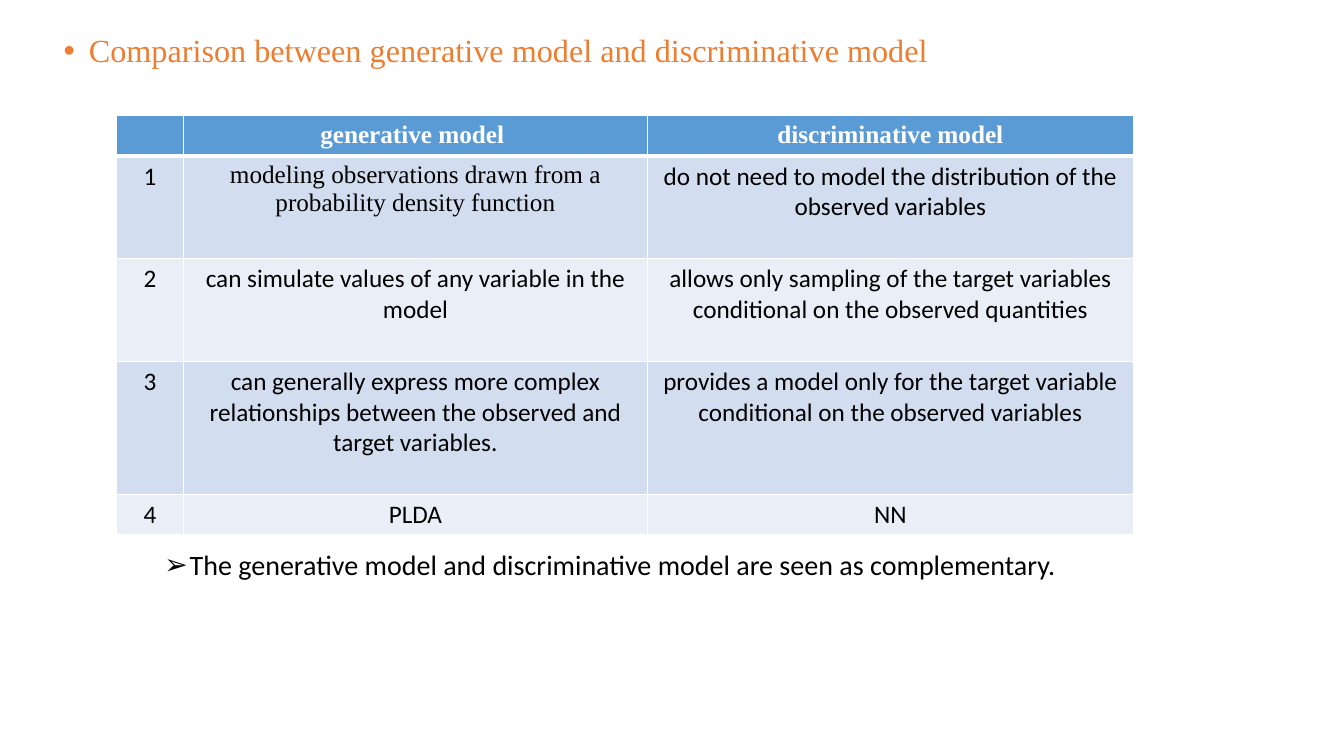
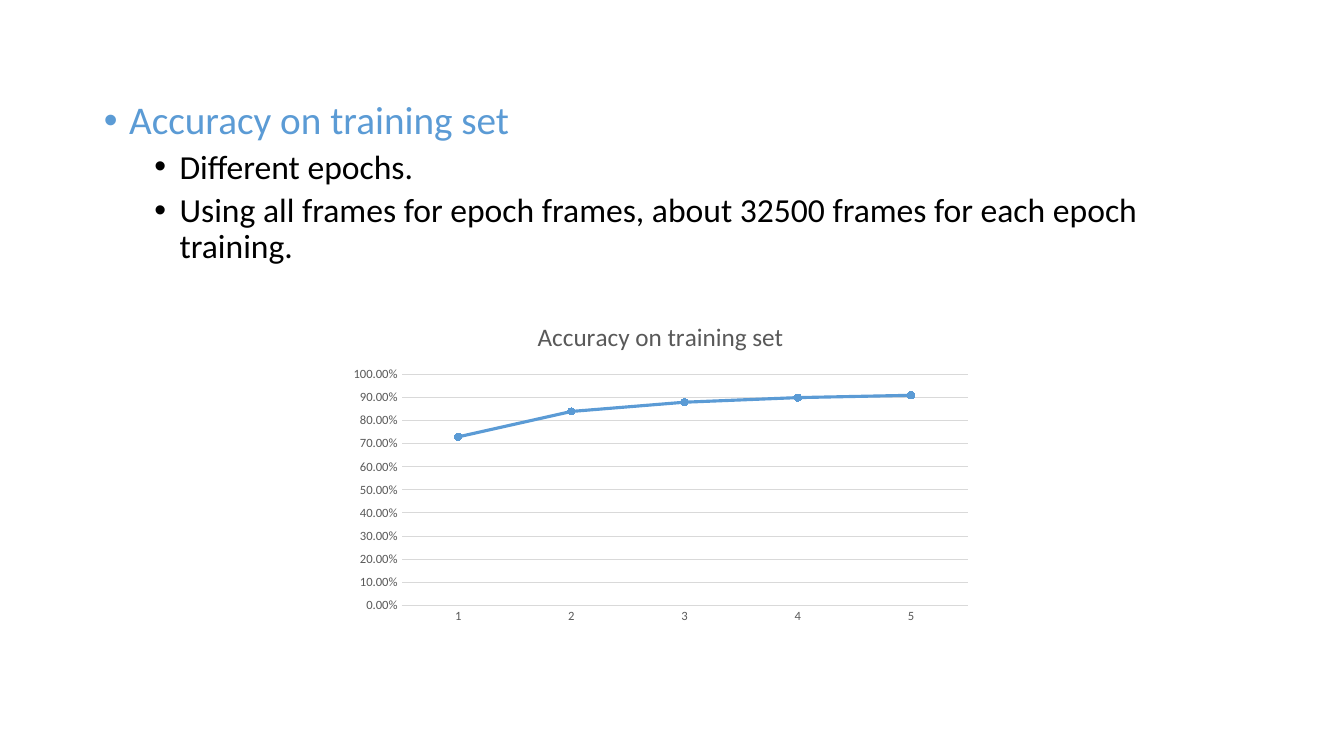
from dataclasses import dataclass

from lxml.etree import SubElement
from pptx import Presentation
from pptx.chart.data import CategoryChartData
from pptx.dml.color import RGBColor
from pptx.enum.chart import XL_CHART_TYPE as ChartType, XL_MARKER_STYLE as Marker
from pptx.enum.chart import XL_TICK_MARK as Tick
from pptx.enum.text import PP_ALIGN as Align
from pptx.oxml.ns import qn
from pptx.util import Emu, Inches, Pt


@dataclass(frozen=True)
class Theme:
    sans: str = "Calibri"
    serif: str = "Times New Roman"
    blue: str = "5B9BD5"
    orange: str = "ED7D31"
    black: str = "000000"
    white: str = "FFFFFF"
    grey: str = "595959"
    rule: str = "D9D9D9"
    bands: tuple = ("D2DEEF", "EAEFF7")
    heading: float = 28
    serif_heading: float = 23
    body: float = 24
    remark: float = 20
    cell: float = 18
    axis: float = 9


T = Theme()
WIDTH, HEIGHT = Inches(13.33), Inches(7.5)


@dataclass(frozen=True)
class Bullet:
    text: str
    size: float
    color: str = T.black
    font: str = T.sans
    level: int = 0
    mark: str = "•"


def box(left, top, width, height):
    """Turn percentages of the slide into a position and a size."""
    return (Emu(int(WIDTH * left / 100)), Emu(int(HEIGHT * top / 100)),
            Emu(int(WIDTH * width / 100)), Emu(int(HEIGHT * height / 100)))


def style(font, size, color, name=T.sans, bold=False):
    font.size, font.name, font.bold = Pt(size), name, bold
    font.color.rgb = RGBColor.from_string(color)


def add_bullets(s, area, bullets):
    tf = s.shapes.add_textbox(*area).text_frame
    tf.word_wrap = True
    for i, item in enumerate(bullets):
        p = tf.add_paragraph() if i else tf.paragraphs[0]
        p.text = item.text
        p.level = item.level
        p.line_spacing = 0.9
        if i:
            p.space_before = Pt(5)
        style(p.runs[0].font, item.size, item.color, item.font)
        pPr = p._p.get_or_add_pPr()
        pPr.set("marL", str(Inches(0.25 + 0.5 * item.level)))
        pPr.set("indent", str(-Inches(0.25)))
        SubElement(pPr, qn("a:buFont"), typeface="Arial")
        SubElement(pPr, qn("a:buChar"), char=item.mark)


def set_borders(cell, bottom):
    tcPr = cell._tc.get_or_add_tcPr()
    for i, (side, width) in enumerate((("L", 1), ("R", 1), ("T", 1), ("B", bottom))):
        ln = tcPr.makeelement(qn(f"a:ln{side}"), {"w": str(Pt(width))})
        SubElement(SubElement(ln, qn("a:solidFill")), qn("a:srgbClr"), val=T.white)
        tcPr.insert(i, ln)


def add_comparison(s, area, rows, col_shares, row_shares, serif_cells):
    """Place a banded table whose columns and rows divide the area by shares."""
    table = s.shapes.add_table(len(rows), len(rows[0]), *area).table
    for col, share in zip(table.columns, col_shares):
        col.width = Emu(int(area[2] * share / sum(col_shares)))
    for row, share in zip(table.rows, row_shares):
        row.height = Emu(int(area[3] * share / sum(row_shares)))
    for r, texts in enumerate(rows):
        header = r == 0
        for c, text in enumerate(texts):
            cell = table.cell(r, c)
            cell.fill.solid()
            fill = T.blue if header else T.bands[(r - 1) % 2]
            cell.fill.fore_color.rgb = RGBColor.from_string(fill)
            set_borders(cell, 3 if header else 1)
            p = cell.text_frame.paragraphs[0]
            p.text = text
            p.alignment = Align.CENTER
            name = T.serif if header or (r, c) in serif_cells else T.sans
            for run in p.runs:
                style(run.font, T.cell, T.white if header else T.black, name, header)


def set_line(line, color, width):
    line.color.rgb = RGBColor.from_string(color)
    line.width = Pt(width)


def add_accuracy_chart(s, area, title, values):
    data = CategoryChartData(number_format="0.00%")
    data.categories = [str(i + 1) for i in range(len(values))]
    data.add_series("Series 1", values)
    chart = s.shapes.add_chart(ChartType.LINE_MARKERS, *area, data).chart
    style(chart.font, T.axis, T.grey)
    chart.has_legend = False
    chart.has_title = True
    p = chart.chart_title.text_frame.paragraphs[0]
    p.text = title
    style(p.runs[0].font, T.cell, T.grey)

    epochs, accuracy = chart.category_axis, chart.value_axis
    for axis in (epochs, accuracy):
        axis.major_tick_mark = axis.minor_tick_mark = Tick.NONE
        style(axis.tick_labels.font, T.axis, T.grey)
    set_line(epochs.format.line, T.rule, 0.75)
    accuracy.format.line.fill.background()
    set_line(accuracy.major_gridlines.format.line, T.rule, 0.75)
    accuracy.minimum_scale, accuracy.maximum_scale, accuracy.major_unit = 0, 1, 0.1
    accuracy.tick_labels.number_format = "0.00%"
    accuracy.tick_labels.number_format_is_linked = False

    chart.plots[0].vary_by_categories = False
    series = chart.plots[0].series[0]
    series.smooth = False
    set_line(series.format.line, T.blue, 2.25)
    series.marker.style, series.marker.size = Marker.CIRCLE, 5
    series.marker.format.fill.solid()
    series.marker.format.fill.fore_color.rgb = RGBColor.from_string(T.blue)
    set_line(series.marker.format.line, T.blue, 0.75)


def build_comparison_slide(s):
    add_bullets(s, box(4, 4, 90, 8), [
        Bullet("Comparison between generative model and discriminative model",
               T.serif_heading, T.orange, T.serif)])
    rows = [
        ("", "generative model ", "discriminative model"),
        ("1", "modeling observations drawn from a probability density function",
         "do not need to model the distribution of the observed variables"),
        ("2", "can simulate values of any variable in the model",
         "allows only sampling of the target variables conditional on the observed quantities"),
        ("3", "can generally express more complex relationships between the observed "
              "and target variables.",
         "provides a model only for the target variable conditional on the observed variables"),
        ("4", "PLDA", "NN"),
    ]
    add_comparison(s, box(8.65, 15.3, 75.7, 55.4), rows, (0.67, 4.6, 4.83),
                   (0.4, 1.02, 1.02, 1.32, 0.4), serif_cells={(1, 1)})
    add_bullets(s, box(11.5, 72.3, 80, 6), [
        Bullet("The generative model and discriminative model are seen as complementary.",
               T.remark, mark="➢")])


def build_accuracy_slide(s):
    title = "Accuracy on training set"
    add_bullets(s, box(7, 12.7, 86.2, 25), [
        Bullet(title, T.heading, T.blue),
        Bullet("Different epochs.", T.body, level=1),
        Bullet("Using all frames for epoch frames, about 32500 frames for each epoch training.",
               T.body, level=1)])
    add_accuracy_chart(s, box(25.35, 40.1, 47.6, 43.3), title,
                       (0.73, 0.84, 0.88, 0.9, 0.91))


def main():
    prs = Presentation()
    prs.slide_width, prs.slide_height = WIDTH, HEIGHT
    for build in (build_comparison_slide, build_accuracy_slide):
        build(prs.slides.add_slide(prs.slide_layouts[6]))
    prs.save("out.pptx")


if __name__ == "__main__":
    main()
